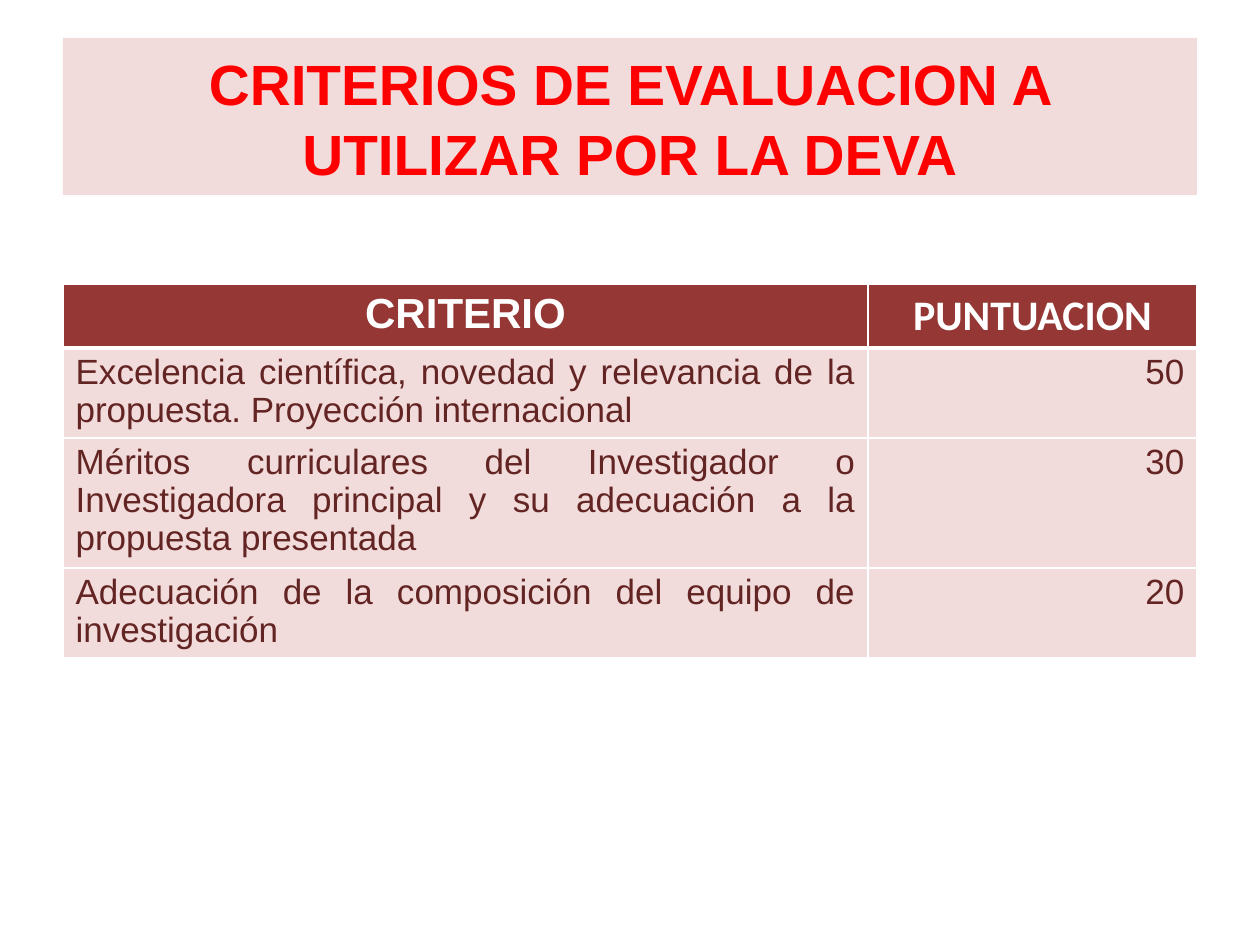
from lxml import etree
from pptx import Presentation
from pptx.dml.color import RGBColor
from pptx.enum.shapes import MSO_SHAPE
from pptx.enum.text import MSO_ANCHOR, PP_ALIGN
from pptx.oxml.ns import qn
from pptx.util import Emu, Pt

PX = 914400 // 126
RECTANGLE = MSO_SHAPE.RECTANGLE
MIDDLE = MSO_ANCHOR.MIDDLE
CENTER, JUSTIFY, RIGHT = PP_ALIGN.CENTER, PP_ALIGN.JUSTIFY, PP_ALIGN.RIGHT

RED = RGBColor(0xFF, 0x00, 0x00)
WHITE = RGBColor(0xFF, 0xFF, 0xFF)
PINK = RGBColor(0xF2, 0xDC, 0xDB)
MAROON = RGBColor(0x95, 0x37, 0x35)
DARK_MAROON = RGBColor(0x63, 0x25, 0x23)

HEADERS = [("CRITERIO", "Arial"), ("PUNTUACION", "Calibri")]
CRITERIA = [
    ("Excelencia científica, novedad y relevancia de la propuesta. Proyección internacional", "50"),
    ("Méritos curriculares del Investigador o Investigadora principal y su adecuación a la propuesta presentada", "30"),
    ("Adecuación de la composición del equipo de investigación", "20"),
]


def px(length):
    return Emu(length * PX)


class SlideBuilder:
    font = "Arial"

    def __init__(self, presentation):
        self.slide = presentation.slides.add_slide(presentation.slide_layouts[6])

    def text(self, frame, text, size, color, align, bold=False, font=None, spacing=1.0):
        paragraph = frame.paragraphs[0]
        paragraph.alignment = align
        paragraph.line_spacing = spacing
        run = paragraph.add_run()
        run.text = text
        run.font.name = font or self.font
        run.font.size = Pt(size)
        run.font.bold = bold
        run.font.color.rgb = color

    def title(self, text, left, top, width, height):
        shape = self.slide.shapes.add_shape(RECTANGLE, px(left), px(top), px(width), px(height))
        shape.shadow.inherit = False
        shape.fill.solid()
        shape.fill.fore_color.rgb = PINK
        shape.line.fill.background()
        frame = shape.text_frame
        frame.word_wrap = True
        frame.vertical_anchor = MIDDLE
        self.text(frame, text, 32.4, RED, CENTER, bold=True, spacing=1.04)

    def borders(self, cell, bottom):
        properties = cell._tc.get_or_add_tcPr()
        widths = {"a:lnL": 1, "a:lnR": 1, "a:lnT": 1, "a:lnB": bottom}
        for position, (tag, width) in enumerate(widths.items()):
            line = etree.Element(qn(tag), w=str(Pt(width)))
            fill = etree.SubElement(line, qn("a:solidFill"))
            etree.SubElement(fill, qn("a:srgbClr"), val=str(WHITE))
            properties.insert(position, line)

    def cell(self, cell, fill, bottom, *text, **style):
        cell.fill.solid()
        cell.fill.fore_color.rgb = fill
        self.borders(cell, bottom)
        self.text(cell.text_frame, *text, **style)

    def table(self, left, top, columns, rows):
        table = self.slide.shapes.add_table(
            len(rows), len(columns), px(left), px(top), px(sum(columns)), px(sum(rows))).table
        for column, width in zip(table.columns, columns):
            column.width = px(width)
        for row, height in zip(table.rows, rows):
            row.height = px(height)

        # Header row
        for index, (header, font) in enumerate(HEADERS):
            self.cell(table.cell(0, index), MAROON, 3, header, 24, WHITE, CENTER,
                      bold=True, font=font)

        # Criteria and scores
        for row, values in enumerate(CRITERIA, 1):
            for index, (value, align) in enumerate(zip(values, (JUSTIFY, RIGHT))):
                self.cell(table.cell(row, index), PINK, 1, value, 20, DARK_MAROON, align,
                          spacing=0.97)


def main():
    presentation = Presentation()
    presentation.slide_width = px(1260)
    presentation.slide_height = px(945)
    builder = SlideBuilder(presentation)
    builder.title("CRITERIOS DE EVALUACION A UTILIZAR POR LA DEVA", 63, 38, 1134, 157)
    builder.table(63, 284, columns=[805, 329], rows=[64, 90, 130, 90])
    presentation.save("out.pptx")


if __name__ == "__main__":
    main()
